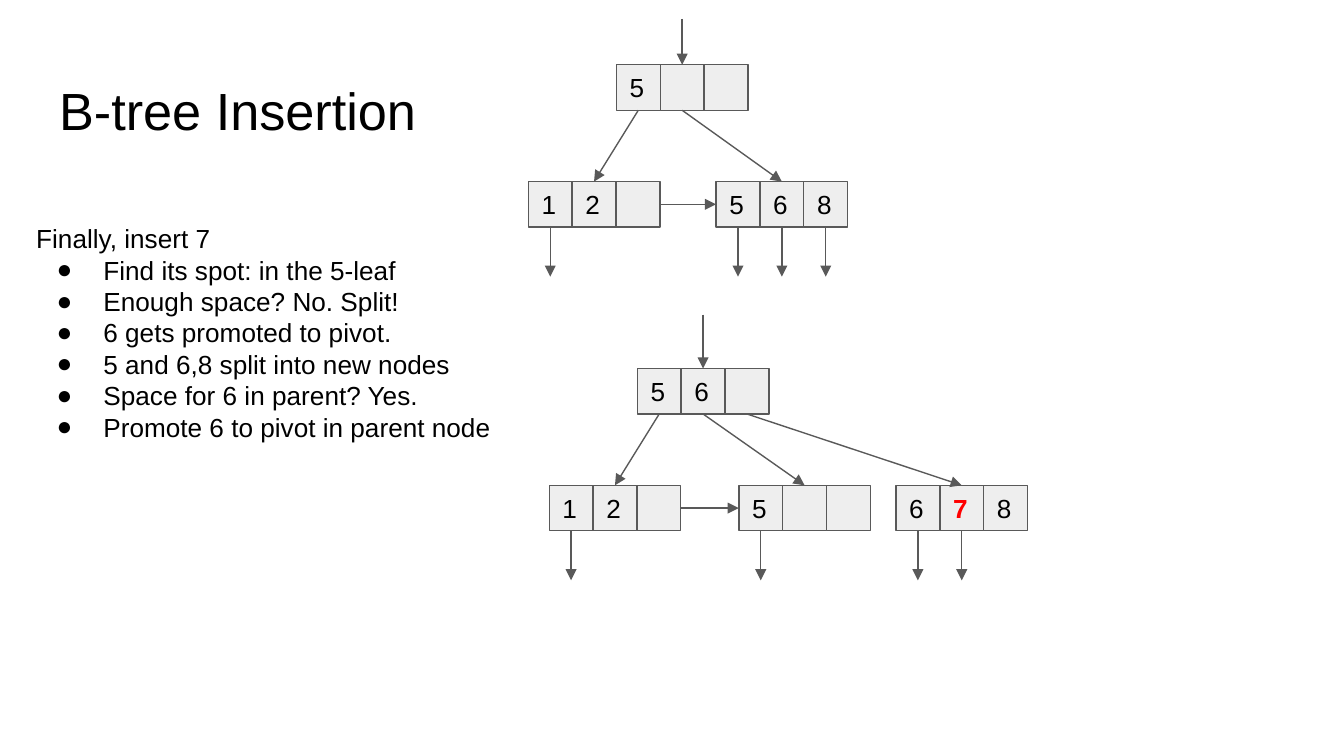
from dataclasses import dataclass

from lxml.etree import SubElement
from pptx import Presentation
from pptx.dml.color import RGBColor
from pptx.enum.shapes import MSO_CONNECTOR, MSO_SHAPE
from pptx.enum.text import MSO_ANCHOR, MSO_AUTO_SIZE, PP_ALIGN
from pptx.oxml.ns import qn
from pptx.util import Pt


@dataclass(frozen=True)
class Theme:
    ink: RGBColor = RGBColor(0x00, 0x00, 0x00)
    inserted: RGBColor = RGBColor(0xFF, 0x00, 0x00)
    cell: RGBColor = RGBColor(0xEE, 0xEE, 0xEE)
    edge: RGBColor = RGBColor(0x59, 0x59, 0x59)
    font: str = "Arial"
    title_size: int = 28
    text_size: int = 14
    line_width: float = 0.75


THEME = Theme()
TOP, LEFT, BOTTOM, RIGHT = range(4)
CELL_WIDTH, CELL_HEIGHT = 23.5, 24.4
LEVEL_DROP = 62.6
POINTER_LENGTH = 26.5
INSET = 7.2

STEPS = [
    "Find its spot: in the 5-leaf",
    "Enough space? No. Split!",
    "6 gets promoted to pivot.",
    "5 and 6,8 split into new nodes",
    "Space for 6 in parent? Yes.",
    "Promote 6 to pivot in parent node",
]


def style_font(paragraph, size, color=THEME.ink):
    paragraph.font.name = THEME.font
    paragraph.font.size = Pt(size)
    paragraph.font.color.rgb = color
    paragraph.alignment = PP_ALIGN.LEFT


def place(placeholder, box, anchor):
    left, top, width, height = map(Pt, box)
    placeholder.left, placeholder.top = left, top
    placeholder.width, placeholder.height = width, height
    frame = placeholder.text_frame
    frame.auto_size = MSO_AUTO_SIZE.NONE
    frame.word_wrap = True
    frame.vertical_anchor = anchor
    frame.margin_left = frame.margin_right = Pt(INSET)
    frame.margin_top = frame.margin_bottom = Pt(INSET)
    return frame


def add_title(slide, box):
    frame = place(slide.shapes.title, box, MSO_ANCHOR.BOTTOM)
    frame.margin_bottom = Pt(5)
    frame.text = "B-tree Insertion"
    style_font(frame.paragraphs[0], THEME.title_size)


def set_bullet(paragraph, character):
    properties = paragraph._p.get_or_add_pPr()
    if character:
        properties.set("marL", str(Pt(36)))
        properties.set("indent", str(-Pt(25)))
        SubElement(properties, qn("a:buFont"), typeface=THEME.font)
        SubElement(properties, qn("a:buChar"), char=character)
    else:
        properties.set("marL", "0")
        properties.set("indent", "0")
        SubElement(properties, qn("a:buNone"))


def add_steps(slide, box):
    frame = place(slide.placeholders[1], box, MSO_ANCHOR.TOP)
    frame.margin_top = Pt(41.5)
    frame.text = "\n".join(["Finally, insert 7", *STEPS])
    for index, paragraph in enumerate(frame.paragraphs):
        style_font(paragraph, THEME.text_size)
        paragraph.space_before = Pt(0)
        set_bullet(paragraph, "●" if index else None)


def add_arrow(slide):
    arrow = slide.shapes.add_connector(MSO_CONNECTOR.STRAIGHT, 0, 0, 0, 0)
    arrow.line.color.rgb = THEME.edge
    arrow.line.width = Pt(THEME.line_width)
    SubElement(arrow.line._get_or_add_ln(), qn("a:tailEnd"), type="triangle")
    SubElement(arrow._element.spPr, qn("a:effectLst"))
    return arrow


def link(slide, source, source_side, target, target_side):
    arrow = add_arrow(slide)
    arrow.begin_connect(source, source_side)
    arrow.end_connect(target, target_side)


def add_entry(slide, cell, length):
    arrow = add_arrow(slide)
    arrow.begin_x = cell.left + cell.width // 2
    arrow.begin_y = cell.top - Pt(length)
    arrow.end_connect(cell, TOP)


def add_pointer(slide, cell):
    arrow = add_arrow(slide)
    arrow.begin_connect(cell, BOTTOM)
    arrow.end_x = cell.left + cell.width // 2
    arrow.end_y = cell.top + cell.height + Pt(POINTER_LENGTH)


def add_cell(slide, left, top, key, inserted):
    cell = slide.shapes.add_shape(
        MSO_SHAPE.RECTANGLE, Pt(left), Pt(top), Pt(CELL_WIDTH), Pt(CELL_HEIGHT)
    )
    cell.shadow.inherit = False
    cell.fill.solid()
    cell.fill.fore_color.rgb = THEME.cell
    cell.line.color.rgb = THEME.edge
    cell.line.width = Pt(THEME.line_width)
    if key:
        frame = cell.text_frame
        frame.vertical_anchor = MSO_ANCHOR.MIDDLE
        frame.margin_left = frame.margin_right = Pt(INSET)
        frame.margin_top = frame.margin_bottom = Pt(INSET)
        frame.text = key
        style_font(frame.paragraphs[0], THEME.text_size,
                   THEME.inserted if inserted else THEME.ink)
        if inserted:
            frame.paragraphs[0].font.bold = True
    return cell


def add_node(slide, left, top, keys, inserted=None):
    return [
        add_cell(slide, left + i * CELL_WIDTH, top, key, bool(key) and key == inserted)
        for i, key in enumerate(keys)
    ]


def add_tree(slide, left, top, root_keys, leaves, entry_length, inserted=None):
    root = add_node(slide, left + 47.2, top, root_keys)
    add_entry(slide, root[1], entry_length)
    nodes = []
    for pivot, (offset, keys, pointer_count) in zip(root, leaves):
        leaf = add_node(slide, left + offset, top + LEVEL_DROP, keys, inserted)
        link(slide, pivot, BOTTOM, leaf[1], TOP)
        for cell in leaf[:pointer_count]:
            add_pointer(slide, cell)
        nodes.append(leaf)
    link(slide, nodes[0][2], RIGHT, nodes[1][0], LEFT)


def main():
    deck = Presentation()
    deck.slide_width, deck.slide_height = Pt(720), Pt(405)
    slide = deck.slides.add_slide(deck.slide_layouts[1])
    add_title(slide, (24.5, 35.3, 671, 45.4))
    add_steps(slide, (12.2, 77.8, 267, 310.3))
    add_tree(
        slide, 283, 34.7, ["5", "", ""],
        [(0, ["1", "2", ""], 1), (100.6, ["5", "6", "8"], 3)],
        entry_length=24.5,
    )
    add_tree(
        slide, 294.2, 197.4, ["5", "6", ""],
        [(0, ["1", "2", ""], 1), (101.6, ["5", "", ""], 1), (185.8, ["6", "7", "8"], 2)],
        entry_length=28.8, inserted="7",
    )
    deck.save("out.pptx")


if __name__ == "__main__":
    main()
